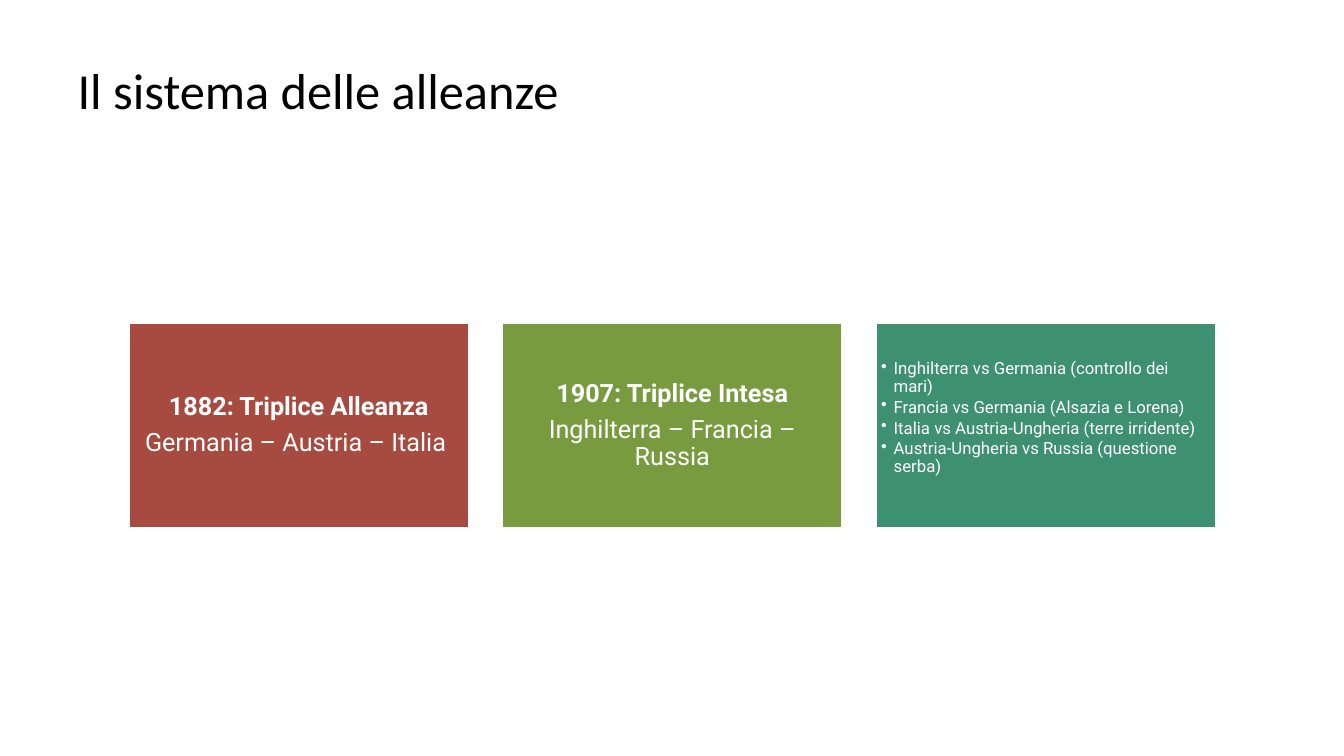
"""Builds the slide on the system of alliances."""
from lxml import etree
from pptx import Presentation
from pptx.dml.color import RGBColor
from pptx.enum.shapes import MSO_SHAPE
from pptx.enum.text import MSO_ANCHOR, PP_ALIGN
from pptx.oxml.ns import qn
from pptx.util import Pt

RECTANGLE = MSO_SHAPE.RECTANGLE
TOP, MIDDLE = MSO_ANCHOR.TOP, MSO_ANCHOR.MIDDLE
LEFT, CENTER = PP_ALIGN.LEFT, PP_ALIGN.CENTER
WHITE, BLACK = "FFFFFF", "000000"

CARD_LEFT, CARD_TOP = 92.16, 231.2
CARD_WIDTH, CARD_HEIGHT, CARD_PITCH = 242.6, 145.5, 266.8
BULLET_INDENT = 9

ALLIANCES = [
    ("A74B40", "1882: Triplice Alleanza", "Germania – Austria – Italia "),
    ("799B3F", "1907: Triplice Intesa", "Inghilterra – Francia – Russia"),
]
RIVALRY_COLOR = "3D9072"
RIVALRIES = [
    "Inghilterra vs Germania (controllo dei mari)",
    "Francia vs Germania (Alsazia e Lorena)",
    "Italia vs Austria-Ungheria (terre irridente)",
    "Austria-Ungheria vs Russia (questione serba)",
]


def color(hex_code):
    return RGBColor.from_string(hex_code)


def write(paragraph, text, font="Roboto", size=18, bold=False, ink=WHITE,
          align=CENTER, after=0, bullet=False):
    paragraph.alignment = align
    paragraph.line_spacing = 0.9
    paragraph.space_before = Pt(0)
    paragraph.space_after = Pt(after)
    run = paragraph.add_run()
    run.text = text
    run.font.name = font
    run.font.size = Pt(size)
    run.font.bold = bold
    run.font.color.rgb = color(ink)
    if bullet:
        paragraph.level = 1
        properties = paragraph._p.get_or_add_pPr()
        properties.set("marL", str(Pt(BULLET_INDENT)))
        properties.set("indent", str(-Pt(BULLET_INDENT)))
        etree.SubElement(properties, qn("a:buChar")).set("char", "•")


class AllianceSlide:
    def __init__(self, presentation):
        self.slide = presentation.slides.add_slide(presentation.slide_layouts[5])

    def title(self, text):
        heading = self.slide.shapes.title
        heading.left, heading.top = Pt(48.2), Pt(43.2)
        heading.width, heading.height = Pt(838.8), Pt(89.3)
        frame = heading.text_frame
        frame.vertical_anchor = TOP
        write(frame.paragraphs[0], text, font="Calibri", size=36, ink=BLACK, align=LEFT)

    def card(self, column, fill, lines, anchor=MIDDLE, inset=5.04, top_inset=5.04):
        card = self.slide.shapes.add_shape(
            RECTANGLE, Pt(CARD_LEFT + column * CARD_PITCH), Pt(CARD_TOP),
            Pt(CARD_WIDTH), Pt(CARD_HEIGHT))
        card.shadow.inherit = False
        card.fill.solid()
        card.fill.fore_color.rgb = color(fill)
        card.line.color.rgb = color(WHITE)
        card.line.width = Pt(1)
        frame = card.text_frame
        frame.word_wrap = True
        frame.vertical_anchor = anchor
        frame.margin_left = frame.margin_right = frame.margin_bottom = Pt(inset)
        frame.margin_top = Pt(top_inset)
        for index, (text, style) in enumerate(lines):
            paragraph = frame.add_paragraph() if index else frame.paragraphs[0]
            write(paragraph, text, **style)


def main():
    presentation = Presentation()
    presentation.slide_width, presentation.slide_height = Pt(960), Pt(540)
    page = AllianceSlide(presentation)
    page.title("Il sistema delle alleanze")
    for column, (fill, treaty, members) in enumerate(ALLIANCES):
        page.card(column, fill, [(treaty, {"bold": True, "after": 6.3}),
                                 (members, {"after": 6.3})])
    rivalry_style = {"size": 12, "align": LEFT, "after": 1.8, "bullet": True}
    page.card(len(ALLIANCES), RIVALRY_COLOR,
              [(rivalry, rivalry_style) for rivalry in RIVALRIES],
              anchor=TOP, inset=3.6, top_inset=26)
    presentation.save("out.pptx")


if __name__ == "__main__":
    main()
